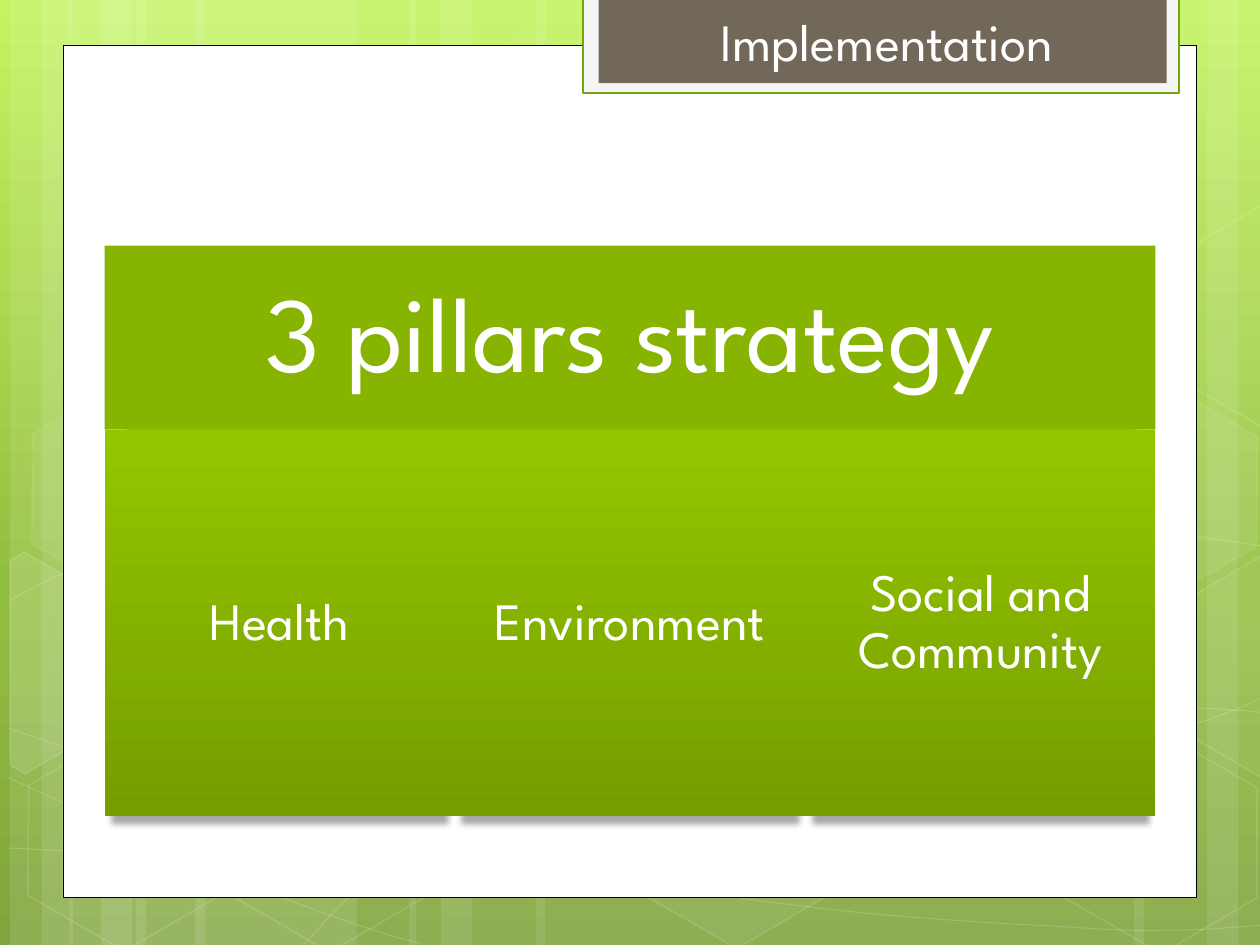
import math

from lxml import etree
from pptx import Presentation
from pptx.dml.color import RGBColor
from pptx.enum.shapes import MSO_SHAPE
from pptx.enum.text import MSO_ANCHOR, MSO_AUTO_SIZE, PP_ALIGN
from pptx.oxml.ns import qn
from pptx.util import Inches, Pt

RECTANGLE, HEXAGON = MSO_SHAPE.RECTANGLE, MSO_SHAPE.HEXAGON
MIDDLE, CENTER, NO_AUTOFIT = MSO_ANCHOR.MIDDLE, PP_ALIGN.CENTER, MSO_AUTO_SIZE.NONE

WHITE = RGBColor(0xFF, 0xFF, 0xFF)
BLACK = RGBColor(0x00, 0x00, 0x00)
PALE_GRAY = RGBColor(0xF5, 0xF5, 0xF5)
TAB_BROWN = RGBColor(0x71, 0x68, 0x5A)
TAB_GREEN = RGBColor(0x74, 0xA5, 0x10)
HEADER_GREEN = RGBColor(0x86, 0xB4, 0x00)
BACKGROUND_STOPS = [(0, RGBColor(0xC3, 0xF3, 0x5F)), (62, RGBColor(0x93, 0xBF, 0x3F)),
                    (100, RGBColor(0x81, 0xA5, 0x3E))]
PILLAR_STOPS = [(0, RGBColor(0x94, 0xC6, 0x00)), (100, RGBColor(0x76, 0x9D, 0x00))]
FONT = "League Spartan"
TILT = 30

# Left and width of each full-height stripe
STRIPES = [(1.08, 1.75), (0.08, 0.5), (0.33, 0.83), (1.55, 1.75), (0.55, 0.5), (0.8, 0.83),
           (7.33, 1.75), (9.58, 0.5), (9, 0.83), (4.25, 3.08), (3.25, 0.5), (3.5, 0.83)]
# Start point, then two control points and an end point for each curve
WAVES = [
    [(0.07, 6.73), (0.61, 6.76), (1.15, 6.79), (1.9, 6.78), (2.65, 6.77), (3.58, 6.75),
     (4.58, 6.65), (5.58, 6.55), (7, 6.36), (7.92, 6.17), (8.83, 5.98), (9.77, 5.68),
     (10.07, 5.51)],
    [(0.07, 4.77), (0.36, 4.61), (0.65, 4.46), (1.21, 4.31), (1.78, 4.16), (2.59, 3.94),
     (3.47, 3.87), (4.36, 3.8), (5.44, 3.79), (6.54, 3.87), (7.64, 3.95), (9.47, 4.26),
     (10.07, 4.34)],
    [(0.06, 6.17), (1.27, 6.72), (2.47, 7.27), (3.34, 7.49)],
    [(0.07, 5.78), (0.38, 5.89), (0.7, 6), (1.28, 6.16), (1.86, 6.31), (2.73, 6.56),
     (3.57, 6.73), (4.4, 6.9), (5.45, 7.08), (6.28, 7.18), (7.11, 7.29), (8, 7.33),
     (8.53, 7.36), (9.05, 7.4), (9.19, 7.38), (9.45, 7.38), (9.71, 7.37), (9.89, 7.35),
     (10.07, 7.34)],
    [(2.42, 7.49), (2.6, 7.29), (2.78, 7.09), (3.02, 6.91), (3.26, 6.73), (3.6, 6.53),
     (3.88, 6.39), (4.16, 6.25), (4.33, 6.19), (4.7, 6.09), (5.06, 5.99), (5.73, 5.85),
     (6.08, 5.78), (6.44, 5.71), (6.49, 5.71), (6.8, 5.69), (7.11, 5.66), (7.6, 5.63),
     (7.94, 5.62), (8.29, 5.61), (8.86, 5.62), (8.86, 5.62), (9.08, 5.62), (9.31, 5.62),
     (9.53, 5.62), (9.71, 5.63), (9.88, 5.64), (9.97, 5.65), (10.06, 5.66), (10.03, 5.65),
     (10.06, 5.66)],
]
# Left, top, fill opacity and line opacity (percent)
HEXAGONS = [(3.34, 0.36, 4, 8), (4.97, 5.89, 6, 12), (0.11, 5.91, 0, 12),
            (0.14, 3.12, 7, 8), (1.74, 5.92, 0, 12), (7.53, 4.53, 10, 12),
            (8.34, 5.93, 0, 12), (8.34, 3.14, 7, 8)]
# Hexagons cut off by the slide edge: fill opacity, center and corners
CUT_HEXAGONS = [
    (10, (0.36, 5.35), [(0.08, 4.45), (0.19, 4.38), (0.96, 4.82), (0.95, 5.7),
                        (0.2, 6.14), (0.08, 6.07)]),
    (4, (9.85, 5.2), [(9.26, 4.85), (10.01, 4.41), (10.09, 4.46), (10.09, 6.13),
                      (10.02, 6.17), (9.26, 5.73)]),
    (0, (9.85, 2.41), [(9.26, 2.07), (10.01, 1.63), (10.1, 1.68), (10.09, 3.35),
                       (10.02, 3.39), (9.26, 2.95)]),
]


def set_solid(fill, color, opacity=100):
    """Fill with a color; zero opacity means no fill."""
    if not opacity:
        fill.background()
        return
    fill.solid()
    fill.fore_color.rgb = color
    if opacity < 100:
        color_element = fill._xPr.find(qn("a:solidFill"))[0]
        etree.SubElement(color_element, qn("a:alpha"), val=str(opacity * 1000))


def set_gradient(fill, stops):
    """Fill with a top-to-bottom gradient of (percent, color) stops."""
    fill.gradient()
    fill.gradient_angle = 270
    stop_list = fill._xPr.find(qn("a:gradFill")).find(qn("a:gsLst"))
    for old_stop in list(stop_list):
        stop_list.remove(old_stop)
    for percent, color in stops:
        stop = etree.SubElement(stop_list, qn("a:gs"), pos=str(percent * 1000))
        etree.SubElement(stop, qn("a:srgbClr"), val=str(color))


def set_line(shape, color, width, opacity=100):
    shape.line.width = Pt(width)
    set_solid(shape.line.fill, color, opacity)


def add_box(slide, box, color, opacity=100, preset=RECTANGLE):
    shape = slide.shapes.add_shape(preset, *(Inches(length) for length in box))
    shape.shadow.inherit = False
    set_solid(shape.fill, color, opacity)
    shape.line.fill.background()
    return shape


def add_outline(slide, points, closed):
    points = [(Inches(x), Inches(y)) for x, y in points]
    builder = slide.shapes.build_freeform(*points[0])
    builder.add_line_segments(points[1:], close=closed)
    shape = builder.convert_to_shape()
    shape.shadow.inherit = False
    return shape


def add_wave(slide, nodes):
    """Add an open outline whose every three segments become one curve."""
    wave = add_outline(slide, nodes, closed=False)
    segments = list(wave._element.iter(qn("a:lnTo")))
    for first in range(0, len(segments), 3):
        curve = etree.Element(qn("a:cubicBezTo"))
        segments[first].addprevious(curve)
        for segment in segments[first:first + 3]:
            curve.append(segment[0])
            segment.getparent().remove(segment)
    wave.fill.background()
    set_line(wave, WHITE, 0.5, 20)


def turn_back(point, center):
    """Undo the tilt of a point around a center."""
    across, down = point[0] - center[0], point[1] - center[1]
    cosine, sine = math.cos(math.radians(TILT)), math.sin(math.radians(TILT))
    return (center[0] + across * cosine + down * sine,
            center[1] - across * sine + down * cosine)


def add_shadow(shape):
    effects = shape._element.spPr.find(qn("a:effectLst"))
    shadow = etree.SubElement(effects, qn("a:outerShdw"), blurRad=str(Pt(3.5)),
                              dist=str(Pt(4)), dir="5400000", sx="96000", rotWithShape="0")
    color = etree.SubElement(shadow, qn("a:srgbClr"), val=str(BLACK))
    etree.SubElement(color, qn("a:alpha"), val="34000")


def write_text(shape, text, size, frame_format):
    frame = shape.text_frame
    frame.text = text
    frame_format = {"word_wrap": True, "vertical_anchor": MIDDLE, **frame_format}
    for name, value in frame_format.items():
        setattr(frame, name, value)
    paragraph = frame.paragraphs[0]
    paragraph.alignment = CENTER
    for name, value in {"name": FONT, "size": Pt(size), "bold": False}.items():
        setattr(paragraph.font, name, value)
    paragraph.font.color.rgb = WHITE
    return paragraph


def add_panel(slide, box, text, size, margin):
    """Add a shadowed block of the strategy diagram."""
    panel = add_box(slide, box, HEADER_GREEN)
    add_shadow(panel)
    sides = ("margin_left", "margin_top", "margin_right", "margin_bottom")
    paragraph = write_text(panel, text, size, dict.fromkeys(sides, Inches(margin)))
    paragraph.line_spacing = 0.9
    return panel


def add_backdrop(slide, height):
    set_gradient(slide.background.fill, BACKGROUND_STOPS)
    for left, width in STRIPES:
        add_box(slide, (left, 0, width, height), WHITE, 10)
    for nodes in WAVES:
        add_wave(slide, nodes)
    for left, top, fill_opacity, line_opacity in HEXAGONS:
        hexagon = add_box(slide, (left, top, 1.75, 1.52), WHITE, fill_opacity, HEXAGON)
        hexagon.adjustments[0] = 0.285
        hexagon.rotation = TILT
        set_line(hexagon, WHITE, 1, line_opacity)
    for fill_opacity, center, corners in CUT_HEXAGONS:
        upright = [turn_back(corner, center) for corner in corners]
        hexagon = add_outline(slide, upright, closed=True)
        hexagon.rotation = TILT
        set_solid(hexagon.fill, WHITE, fill_opacity)
        set_line(hexagon, WHITE, 1, 12)


def add_title_tab(slide, left, top, width, height, text):
    frame = add_box(slide, (left, top, width, height), PALE_GRAY)
    set_line(frame, TAB_GREEN, 1.25)
    inner = (left + 0.12, top, width - 0.22, height - 0.08)
    add_box(slide, inner, TAB_BROWN)
    title = slide.shapes.title
    for name, length in zip(("left", "top", "width", "height"), inner):
        setattr(title, name, Inches(length))
    paragraph = write_text(title, text, 30, {"auto_size": NO_AUTOFIT})
    paragraph._p.get_or_add_pPr().set("marL", str(Inches(0.07)))
    slide.shapes._spTree.append(title._element)


def add_strategy(slide, left, top, width, height, heading, pillars):
    heading_height = 1.46
    add_panel(slide, (left, top, width, heading_height), heading, 61, 0.25)
    pillar_width = width / len(pillars)
    for index, pillar in enumerate(pillars):
        box = (left + index * pillar_width, top + heading_height,
               pillar_width, height - heading_height)
        panel = add_panel(slide, box, pillar, 30, 0.12)
        set_gradient(panel.fill, PILLAR_STOPS)


presentation = Presentation()
presentation.slide_width, presentation.slide_height = Inches(10), Inches(7.5)
main_slide = presentation.slides.add_slide(presentation.slide_layouts[5])
add_backdrop(main_slide, 7.5)
card = add_box(main_slide, (0.5, 0.36, 9, 6.76), WHITE)
set_line(card, BLACK, 0.5)
add_title_tab(main_slide, 4.63, -0.02, 4.73, 0.76, "Implementation")
add_strategy(main_slide, 0.83, 1.95, 8.34, 4.53, "3 pillars strategy",
             ["Health", "Environment", "Social and Community"])
presentation.save("out.pptx")
